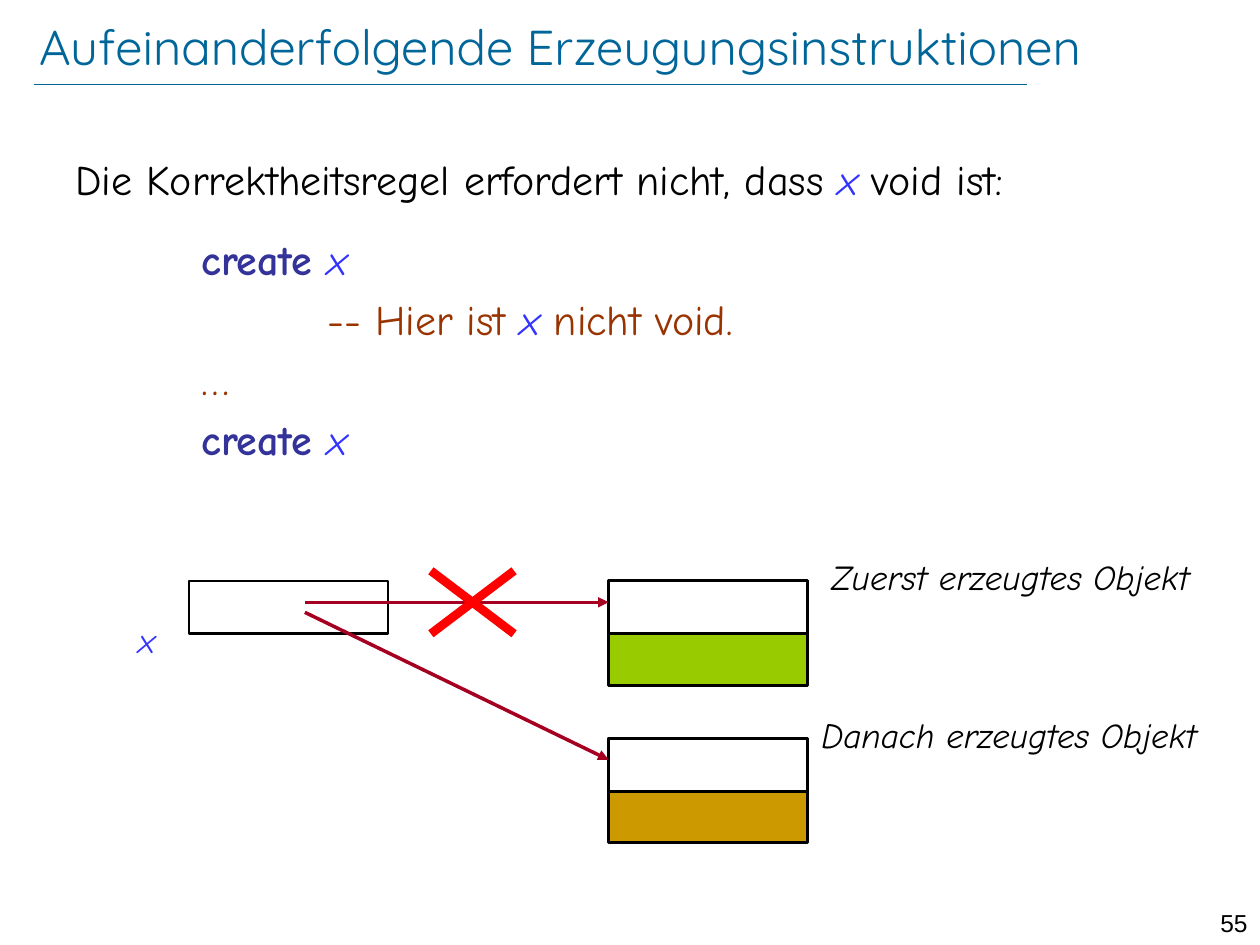
from dataclasses import dataclass

from lxml import etree
from pptx import Presentation
from pptx.dml.color import RGBColor
from pptx.enum import shapes, text
from pptx.oxml import ns
from pptx.util import Inches, Pt


@dataclass(frozen=True)
class Theme:
    heading: str = "006699"
    black: str = "000000"
    white: str = "FFFFFF"
    keyword: str = "333399"
    variable: str = "3333FF"
    comment: str = "993300"
    arrow: str = "A50021"
    cross: str = "FF0000"
    first_object: str = "99CC00"
    second_object: str = "CC9900"
    title_font: str = "Quicksand"
    body_font: str = "Comic Neue"
    number_font: str = "Arial"
    title_size: int = 28
    body_size: int = 24
    label_size: int = 20
    number_size: int = 14


theme = Theme()
presentation = Presentation()
presentation.slide_width, presentation.slide_height = Inches(10), Inches(7.5)
slide = presentation.slides.add_slide(presentation.slide_layouts[6])


def add_text(left, top, width, height, content, font, size, color, italic=False):
    shape = slide.shapes.add_textbox(Inches(left), Inches(top), Inches(width), Inches(height))
    shape.text_frame.word_wrap = True
    paragraph = shape.text_frame.paragraphs[0]
    paragraph.text = content
    paragraph.font.name, paragraph.font.size = font, Pt(size)
    paragraph.font.color.rgb = RGBColor.from_string(color)
    paragraph.font.italic = italic
    return shape


def add_line(start, end, color, width, arrow=False):
    points = [Inches(value) for value in (*start, *end)]
    connector = slide.shapes.add_connector(shapes.MSO_CONNECTOR.STRAIGHT, *points)
    connector.line.color.rgb = RGBColor.from_string(color)
    connector.line.width = Pt(width)
    properties = connector._element.spPr
    if arrow:
        etree.SubElement(properties.find(ns.qn("a:ln")), ns.qn("a:tailEnd"), type="triangle")
    etree.SubElement(properties, ns.qn("a:effectLst"))


# Heading, rule and slide number
add_line((0.27, 0.67), (8.15, 0.67), theme.heading, 0.25)
number = add_text(9.45, 7.16, 0.55, 0.24, "55", theme.number_font, theme.number_size, theme.black)
number.text_frame.paragraphs[0].alignment = text.PP_ALIGN.RIGHT
title = add_text(0.31, 0.11, 8.91, 0.51, "Aufeinanderfolgende Erzeugungsinstruktionen",
                 theme.title_font, theme.title_size, theme.heading)
frame = title.text_frame
frame.vertical_anchor = text.MSO_ANCHOR.MIDDLE
frame.margin_left = frame.margin_right = frame.margin_top = frame.margin_bottom = 0

# Rule and code example: indent in inches, space before in points, runs
variable = ("x", theme.variable)
create = [("create ", theme.keyword), variable]
lines = [
    (0, 0, [("Die Korrektheitsregel erfordert nicht, dass ", theme.black), variable,
            (" void ist:", theme.black)]),
    (1, 16.7, create),
    (2, 5.6, [("-- Hier ist ", theme.comment), ("x ", theme.variable),
              ("nicht void.", theme.comment)]),
    (1, 5.6, [("…", theme.comment)]),
    (1, 5.6, create),
]
body = slide.shapes.add_textbox(Inches(0.5), Inches(1.17), Inches(9), Inches(2.71))
body.text_frame.word_wrap = True
for index, (indent, space, runs) in enumerate(lines):
    paragraph = body.text_frame.paragraphs[0] if index == 0 else body.text_frame.add_paragraph()
    paragraph._p.get_or_add_pPr().set("marL", str(Inches(indent)))
    paragraph.space_before = Pt(space)
    paragraph.font.name, paragraph.font.size = theme.body_font, Pt(theme.body_size)
    for content, color in runs:
        run = paragraph.add_run()
        run.text = content
        run.font.color.rgb = RGBColor.from_string(color)
        run.font.bold = color == theme.keyword
        run.font.italic = color == theme.variable

# Reference cell and the two objects, each a coloured box with a white upper half
box_width, cell_height, object_left = 1.58, 0.42, 4.83
first_top, second_top = 4.61, 5.86
boxes = [
    (1.5, first_top, cell_height, None),
    (object_left, first_top, 0.83, theme.first_object),
    (object_left, first_top, cell_height, theme.white),
    (object_left, second_top, 0.83, theme.second_object),
    (object_left, second_top, cell_height, theme.white),
]
for left, top, height, fill in boxes:
    box = slide.shapes.add_shape(shapes.MSO_SHAPE.RECTANGLE, Inches(left), Inches(top),
                                 Inches(box_width), Inches(height))
    box.shadow.inherit = False
    box.line.color.rgb = RGBColor.from_string(theme.black)
    box.line.width = Pt(1.5)
    if fill:
        box.fill.solid()
        box.fill.fore_color.rgb = RGBColor.from_string(fill)
    else:
        box.fill.background()

# Labels
labels = [
    (1, 4.86, 0.42, "x", theme.variable),
    (6.5, 4.36, 3.5, "Zuerst erzeugtes Objekt", theme.black),
    (6.42, 5.61, 3.58, "Danach erzeugtes Objekt", theme.black),
]
for left, top, width, content, color in labels:
    add_text(left, top, width, 0.44, content, theme.body_font, theme.label_size, color, italic=True)

# Old and new reference
add_line((2.42, 4.78), (object_left, 4.78), theme.arrow, 2, arrow=True)
add_line((2.42, 4.86), (object_left, 6.03), theme.arrow, 2, arrow=True)

# Cross over the old reference
for start_y, end_y in ((4.53, 5.03), (5.03, 4.53)):
    add_line((3.42, start_y), (4.08, end_y), theme.cross, 5)

presentation.save("out.pptx")
